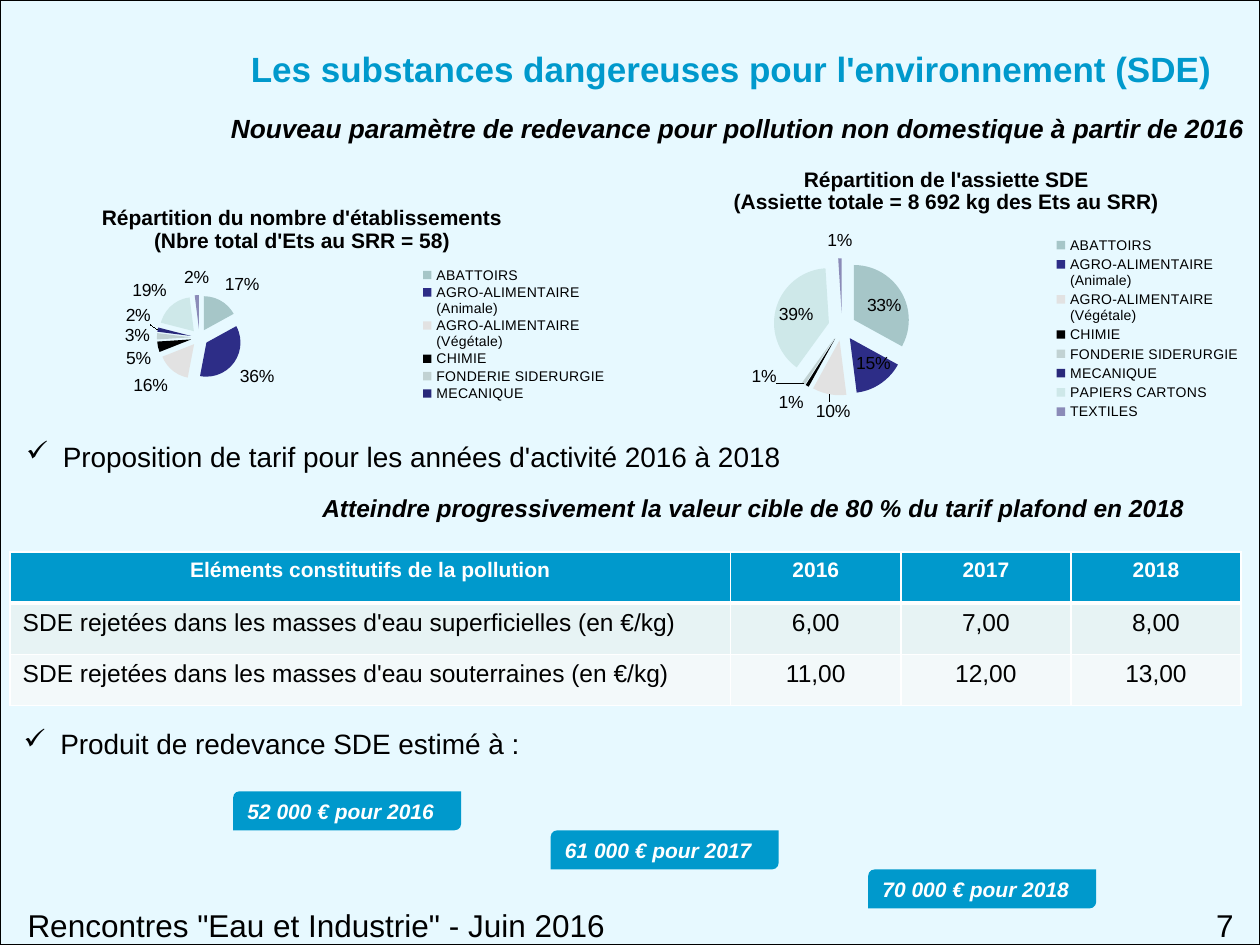
import pptx
import pptx.chart.data
import pptx.dml.color
import pptx.enum.chart
import pptx.enum.shapes
import pptx.enum.text
import pptx.oxml
import pptx.oxml.ns
import pptx.util

Inches = pptx.util.Inches
Pt = pptx.util.Pt
qn = pptx.oxml.ns.qn
ALIGN = pptx.enum.text.PP_ALIGN
ANCHOR = pptx.enum.text.MSO_ANCHOR
SHAPE = pptx.enum.shapes.MSO_SHAPE

INK = {"page": "E7F9FF", "blue": "0099CC", "black": "000000",
       "white": "FFFFFF", "odd": "E7F3F4", "even": "F3F9FA"}
SECTORS = {
    "ABATTOIRS": "A6C6C8",
    "AGRO-ALIMENTAIRE (Animale)": "2D2D87",
    "AGRO-ALIMENTAIRE (Végétale)": "E2E2E2",
    "CHIMIE": "000000",
    "FONDERIE SIDERURGIE": "C1D2D3",
    "MECANIQUE": "28287A",
    "PAPIERS CARTONS": "CEE8E9",
    "TEXTILES": "8B8BB8",
}
RATES = [
    ["Eléments constitutifs de la pollution", "2016", "2017", "2018"],
    ["SDE rejetées dans les masses d'eau superficielles (en €/kg)",
     "6,00", "7,00", "8,00"],
    ["SDE rejetées dans les masses d'eau souterraines (en €/kg)",
     "11,00", "12,00", "13,00"],
]
YIELDS = ["52 000 € pour 2016", "61 000 € pour 2017", "70 000 € pour 2018"]


def rgb(name):
    return pptx.dml.color.RGBColor.from_string(INK.get(name, name))


def paint(item, name):
    item.fill.solid()
    item.fill.fore_color.rgb = rgb(name)


def node(parent, tag, **attrs):
    child = parent.makeelement(qn(tag), {k: str(v) for k, v in attrs.items()})
    parent.append(child)
    return child


def write(frame, text, size=16, color="black", bold=False, italic=False,
          align=ALIGN.LEFT, left=0, hang=0, bullet=None, before=0, lines=None):
    """Fill the empty first paragraph of a frame, or add one."""
    para = frame.paragraphs[0]
    if para.text:
        para = frame.add_paragraph()
    props = para._p.get_or_add_pPr()
    props.set("marL", str(Inches(left)))
    props.set("indent", str(-Inches(hang)))
    if bullet:
        node(props, "a:buChar", char=bullet)
    else:
        node(props, "a:buNone")
    para.alignment = align
    para.space_before = Pt(before)
    if lines:
        para.line_spacing = lines
    run = para.add_run()
    run.text = text
    font = run.font
    font.name, font.size, font.bold, font.italic = "Arial", Pt(size), bold, italic
    font.color.rgb = rgb(color)


def move(holder, box, anchor):
    holder.left, holder.top, holder.width, holder.height = map(Inches, box)
    frame = holder.text_frame
    frame.word_wrap = True
    frame.auto_size = pptx.enum.text.MSO_AUTO_SIZE.NONE
    frame.vertical_anchor = anchor
    return frame


def add_text(slide, box):
    frame = slide.shapes.add_textbox(*map(Inches, box)).text_frame
    frame.word_wrap = True
    return frame


def add_shape(slide, kind, box, fill):
    shape = slide.shapes.add_shape(kind, *map(Inches, box))
    shape.shadow.inherit = False
    paint(shape, fill)
    shape.line.fill.background()
    return shape


def add_page(slide):
    """Lay the framed background behind all else."""
    page = add_shape(slide, SHAPE.RECTANGLE, (0, 0, 10, 7.5), "page")
    page.line.color.rgb = rgb("black")
    page.line.width = Pt(1)
    slide.shapes._spTree.insert(2, page._element)


def add_badge(slide, text, box):
    shape = add_shape(slide, SHAPE.ROUND_2_DIAG_RECTANGLE, box, "blue")
    shape.text_frame.vertical_anchor = ANCHOR.MIDDLE
    write(shape.text_frame, text, size=12, color="white", bold=True, italic=True)


def add_edge(cell, tag, width):
    edge = node(cell._tc.get_or_add_tcPr(), tag, w=Pt(width))
    node(node(edge, "a:solidFill"), "a:srgbClr", val=INK["white"])


def add_rates(slide, box):
    table = slide.shapes.add_table(3, 4, *map(Inches, box)).table
    for col, width in zip(table.columns, [5.72, 1.35, 1.35, 1.35]):
        col.width = Inches(width)
    for r, row in enumerate(RATES):
        for c, text in enumerate(row):
            cell = table.cell(r, c)
            for side in "LRTB":
                heavy = (r, side) in [(0, "B"), (1, "T")]
                add_edge(cell, "a:ln" + side, 3 if heavy else 1)
            paint(cell, ["blue", "odd", "even"][r])
            write(cell.text_frame, text, size=14 if r else 12,
                  color="black" if r else "white", bold=not r,
                  align=ALIGN.LEFT if r and not c else ALIGN.CENTER)


def place(part, index, inner=False, **spots):
    """Give a chart part a manual layout, as shares of the chart."""
    for old in part.findall(qn("c:layout")):
        part.remove(old)
    layout = part.makeelement(qn("c:layout"), {})
    part.insert(index, layout)
    manual = node(layout, "c:manualLayout")
    if inner:
        node(manual, "c:layoutTarget", val="inner")
    for axis in "xy":
        node(manual, f"c:{axis}Mode", val="edge")
    for key, share in spots.items():
        node(manual, "c:" + key, val=share)


def add_pie(slide, box, title, vals, head, plot, key):
    data = pptx.chart.data.CategoryChartData()
    data.categories = list(SECTORS)
    data.add_series("Part", vals)
    chart = slide.shapes.add_chart(pptx.enum.chart.XL_CHART_TYPE.PIE,
                                   *map(Inches, box), data).chart
    chart.font.name, chart.font.size = "Arial", Pt(10)
    chart.font.color.rgb = rgb("black")
    chart.has_title = True
    for line in title:
        write(chart.chart_title.text_frame, line, size=12, bold=True,
              align=ALIGN.CENTER)
    chart.has_legend = True
    chart.legend.position = pptx.enum.chart.XL_LEGEND_POSITION.RIGHT
    chart.legend.include_in_layout = False
    chart.legend.font.size = Pt(8)
    pie = chart.plots[0]
    pie.vary_by_categories = True
    series = pie.series[0]
    for i, color in enumerate(SECTORS.values()):
        paint(series.points[i].format, color)
    ser = series._element
    ser.find(qn("c:dPt")).addprevious(node(ser, "c:explosion", val=25))
    pie.has_data_labels = True
    labels = pie.data_labels
    labels.show_value = False
    labels.show_percentage = True
    labels.number_format = "0%"
    labels.number_format_is_linked = False
    labels.position = pptx.enum.chart.XL_LABEL_POSITION.BEST_FIT
    area = chart._chartSpace.chart.plotArea
    place(area, 0, inner=True, **dict(zip("xywh", plot)))
    place(chart.legend._element, 1, **dict(zip("xywh", key)))
    place(chart.chart_title._element, 1, **dict(zip("xy", head)))


def main():
    deck = pptx.Presentation()
    deck.slide_width, deck.slide_height = Inches(10), Inches(7.5)
    slide = deck.slides.add_slide(deck.slide_layouts[1])
    title, body = slide.placeholders
    add_page(slide)
    write(move(title, (1.89, 0.32, 7.83, 0.44), ANCHOR.MIDDLE),
          "Les substances dangereuses pour l'environnement (SDE)",
          size=20, color="blue", bold=True, align=ALIGN.CENTER)
    write(move(body, (1.61, 0.84, 8.39, 0.35), ANCHOR.TOP),
          "Nouveau paramètre de redevance pour pollution non domestique à partir de 2016",
          size=15, bold=True, italic=True, align=ALIGN.CENTER, left=0.39, hang=0.29)

    tick = {"left": 0.29, "hang": 0.29, "bullet": "✓"}
    offer = add_text(slide, (0.11, 3.44, 9.76, 0.76))
    write(offer, "Proposition de tarif pour les années d'activité 2016 à 2018", **tick)
    write(offer, "Atteindre progressivement la valeur cible de 80 % du tarif plafond en 2018",
          size=14, bold=True, italic=True, left=2.35, before=3, lines=1.5)
    add_rates(slide, (0.08, 4.38, 9.77, 1.22))
    write(add_text(slide, (0.09, 5.72, 4.36, 0.37)),
          "Produit de redevance SDE estimé à :", **tick)
    for i, text in enumerate(YIELDS):
        add_badge(slide, text, (1.85 + 2.52 * i, 6.28 + 0.31 * i, 1.81, 0.31))

    add_pie(slide, (-0.21, 1.47, 5.2, 1.82),
            ["Répartition du nombre d'établissements", "(Nbre total d'Ets au SRR = 58)"],
            [17, 36, 16, 5, 3, 2, 19, 2],
            (0.19, 0.07), (0.28, 0.47, 0.13, 0.39), (0.68, 0.35, 0.29, 0.6))
    add_pie(slide, (5.05, 1.15, 4.95, 2.35),
            ["Répartition de l'assiette SDE", "(Assiette totale = 8 692 kg des Ets au SRR)"],
            [33, 15, 10, 1, 1, 0, 39, 1],
            (0.15, 0.06), (0.22, 0.38, 0.22, 0.47), (0.65, 0.3, 0.34, 0.64))

    write(add_text(slide, (0.12, 7.14, 5.12, 0.3)),
          'Rencontres "Eau et Industrie" - Juin 2016', size=18)
    write(add_text(slide, (8.93, 7.14, 0.96, 0.3)), "7", size=18, align=ALIGN.RIGHT)
    deck.save("out.pptx")


if __name__ == "__main__":
    main()
